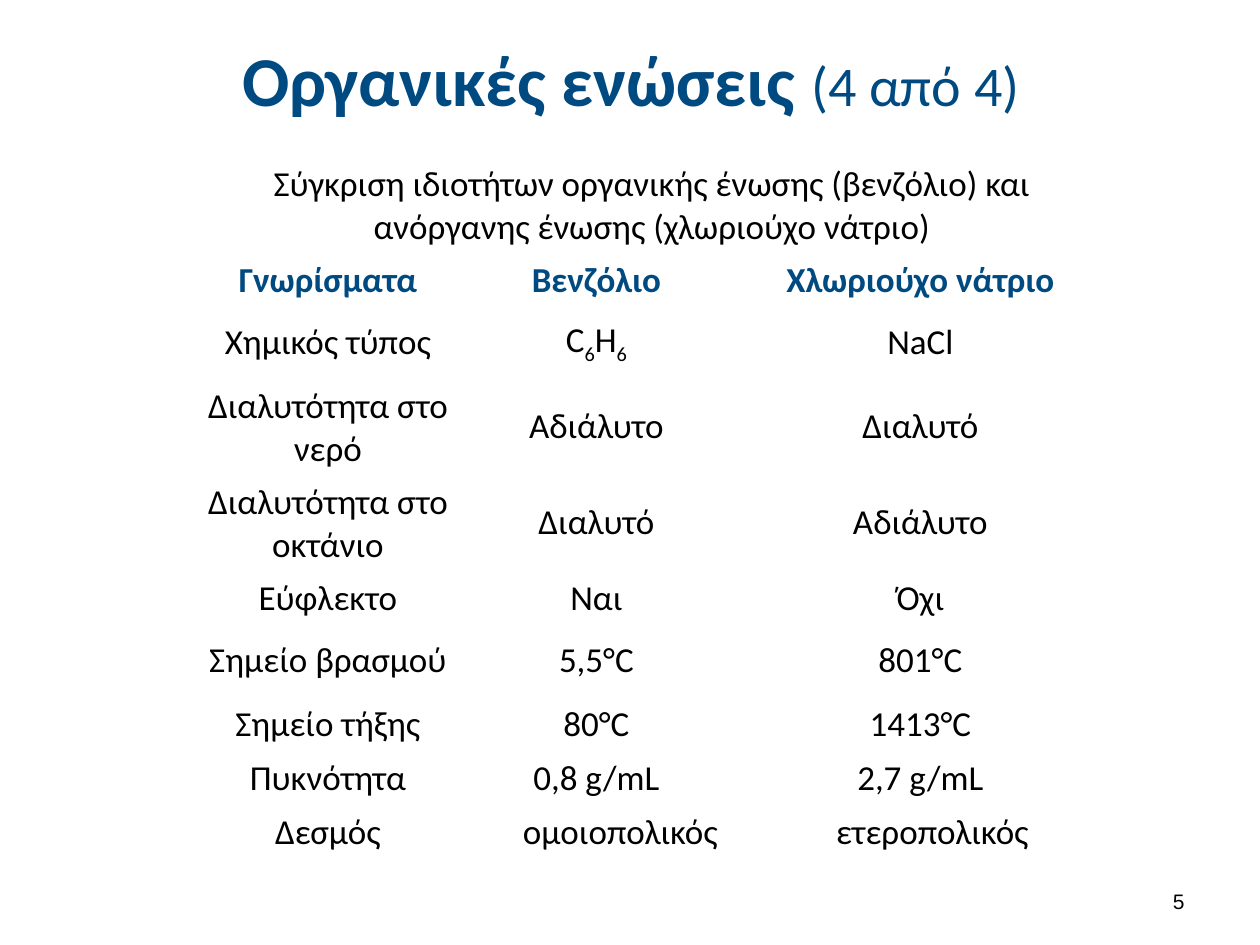
from pptx import Presentation
from pptx.dml.color import RGBColor
from pptx.enum.text import MSO_ANCHOR, PP_ALIGN
from pptx.util import Pt

PX = 914400 // 126
BLUE = RGBColor(0x00, 0x4A, 0x82)
BLACK = RGBColor(0x00, 0x00, 0x00)

CAPTION = "Σύγκριση ιδιοτήτων οργανικής ένωσης (βενζόλιο) και ανόργανης ένωσης (χλωριούχο νάτριο)"
ROWS = [
    (72, [CAPTION, "", ""]),
    (42, ["Γνωρίσματα", "Βενζόλιο", "Χλωριούχο νάτριο"]),
    (72, ["Χημικός τύπος", "", "NaCl"]),
    (72, ["Διαλυτότητα στο νερό", "Αδιάλυτο", "Διαλυτό"]),
    (72, ["Διαλυτότητα στο οκτάνιο", "Διαλυτό", "Αδιάλυτο"]),
    (42, ["Εύφλεκτο", "Ναι", "Όχι"]),
    (72, ["Σημείο βρασμού", "5,5°C", "801°C"]),
    (42, ["Σημείο τήξης", "80°C", "1413°C"]),
    (42, ["Πυκνότητα", "0,8 g/mL", "2,7 g/mL"]),
    (42, ["Δεσμός", "ομοιοπολικός", "ετεροπολικός"]),
]
COLUMN_WIDTHS = [262, 275, 373]
FORMULA_CELL = (2, 1)
HEADER_ROW = 1


def style_run(run, size, color, bold=False, name="Calibri"):
    run.font.name = name
    run.font.size = Pt(size)
    run.font.color.rgb = color
    run.font.bold = bold


def add_text(slide, left, top, width, height, alignment):
    text_frame = slide.shapes.add_textbox(left * PX, top * PX, width * PX, height * PX).text_frame
    text_frame.word_wrap = True
    text_frame.vertical_anchor = MSO_ANCHOR.MIDDLE
    paragraph = text_frame.paragraphs[0]
    paragraph.alignment = alignment
    return paragraph


presentation = Presentation()
presentation.slide_width = 1260 * PX
presentation.slide_height = 945 * PX
slide = presentation.slides.add_slide(presentation.slide_layouts[6])

title = add_text(slide, 64, 16, 1134, 125, PP_ALIGN.CENTER)
for text, size, bold in [("Οργανικές ενώσεις ", 40, True), ("(4 από 4)", 32, False)]:
    run = title.add_run()
    run.text = text
    style_run(run, size, BLUE, bold)

number = add_text(slide, 903, 876, 294, 50, PP_ALIGN.RIGHT)
number.text = "5"
style_run(number.runs[0], 12, BLACK, name="Arial")

table = slide.shapes.add_table(
    len(ROWS), len(COLUMN_WIDTHS), 197 * PX, 157 * PX,
    sum(COLUMN_WIDTHS) * PX, sum(height for height, texts in ROWS) * PX,
).table
table.first_row = False
table.horz_banding = False
for column, width in zip(table.columns, COLUMN_WIDTHS):
    column.width = width * PX
table.cell(0, 0).merge(table.cell(0, 2))

for row_index, (height, texts) in enumerate(ROWS):
    table.rows[row_index].height = height * PX
    is_header = row_index == HEADER_ROW
    for column_index, text in enumerate(texts):
        cell = table.cell(row_index, column_index)
        cell.fill.background()
        cell.vertical_anchor = MSO_ANCHOR.MIDDLE
        cell.margin_left = cell.margin_right = 6 * PX
        cell.margin_top = cell.margin_bottom = 6 * PX
        paragraph = cell.text_frame.paragraphs[0]
        paragraph.alignment = PP_ALIGN.CENTER
        if (row_index, column_index) == FORMULA_CELL:
            for symbol in "C6H6":
                run = paragraph.add_run()
                run.text = symbol
                if symbol.isdigit():
                    run.font._element.set("baseline", "-25000")
        elif text:
            paragraph.text = text
        for run in paragraph.runs:
            style_run(run, 20, BLUE if is_header else BLACK, is_header)

for column_index, indent in [(1, 48), (2, 24)]:
    cell = table.cell(len(ROWS) - 1, column_index)
    cell.vertical_anchor = MSO_ANCHOR.TOP
    cell.margin_left = indent * PX
    cell.margin_right = 0

presentation.save("out.pptx")
